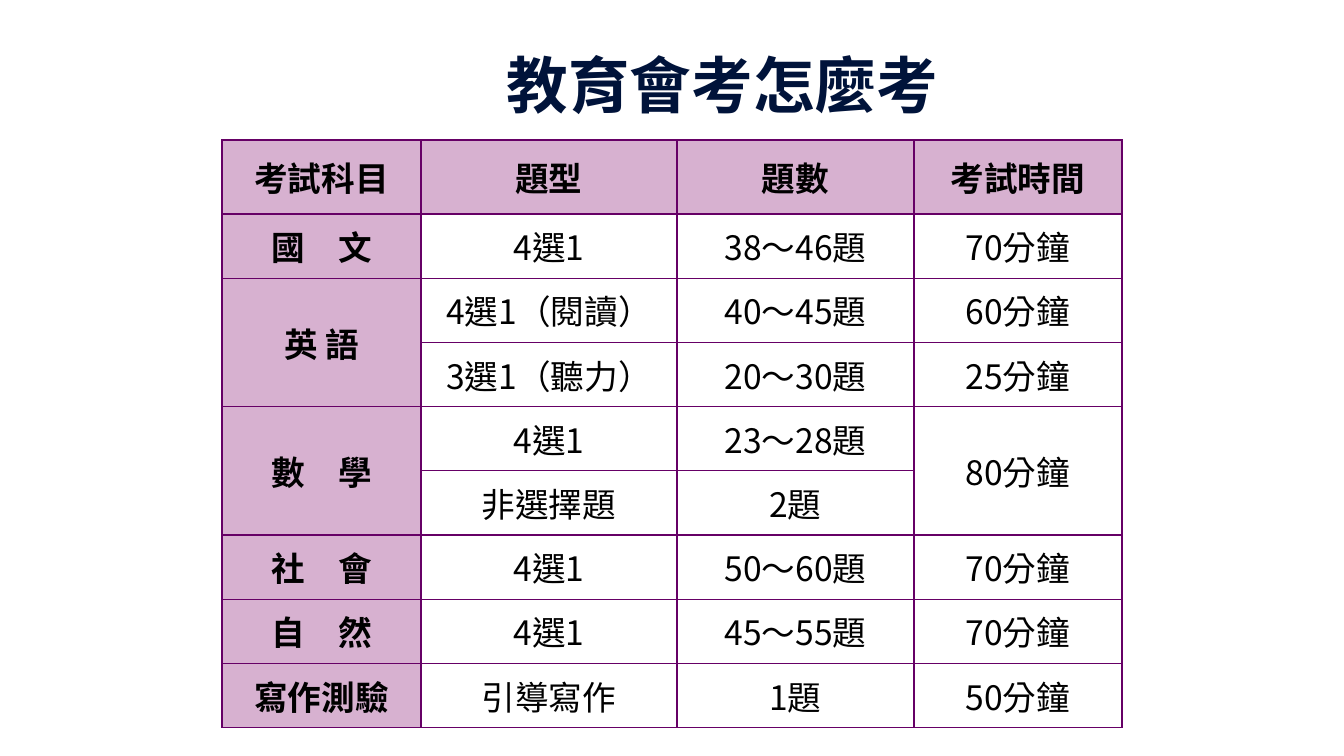
from lxml import etree
from pptx import Presentation
from pptx.dml.color import RGBColor
from pptx.enum.text import MSO_ANCHOR, PP_ALIGN
from pptx.oxml.ns import qn
from pptx.util import Pt

MIDDLE = MSO_ANCHOR.MIDDLE
CENTER = PP_ALIGN.CENTER
SCALE = 914400 / 100.8
FONT = "Noto Sans CJK SC"
COLORS = {"title": "00133A", "text": "000000", "head": "D7B1D0", "line": "660066"}

COLS = [199, 256, 237, 208]
HEAD_H = 74
ROWS = [
    ["考試科目", "題型", "題數", "考試時間"],
    ["國　文", "4選1", "38～46題", "70分鐘"],
    ["英 語", "4選1（閱讀）", "40～45題", "60分鐘"],
    ["", "3選1（聽力）", "20～30題", "25分鐘"],
    ["數　學", "4選1", "23～28題", "80分鐘"],
    ["", "非選擇題", "2題", ""],
    ["社　會", "4選1", "50～60題", "70分鐘"],
    ["自　然", "4選1", "45～55題", "70分鐘"],
    ["寫作測驗", "引導寫作", "1題", "50分鐘"],
]


def px(n):
    return round(n * SCALE)


def write(frame, text, size, color, bold):
    frame.text = text
    para = frame.paragraphs[0]
    para.alignment = CENTER
    for run in para.runs:
        font = run.font
        font.size, font.bold, font.name = Pt(size), bold, FONT
        font.color.rgb = RGBColor.from_string(COLORS[color])
        props = run._r.get_or_add_rPr()
        props.set("lang", "zh-TW")
        etree.SubElement(props, qn("a:ea"), typeface=FONT)


def rule(cell):
    """Draw a thin line on all four sides of the cell."""
    props = cell._tc.get_or_add_tcPr()
    for i, side in enumerate("LRTB"):
        line = etree.Element(qn(f"a:ln{side}"), w=str(Pt(1)))
        fill = etree.SubElement(line, qn("a:solidFill"))
        etree.SubElement(fill, qn("a:srgbClr"), val=COLORS["line"])
        props.insert(i, line)


def add_title(slide, x, y, w, h):
    box = slide.shapes.add_textbox(px(x), px(y), px(w), px(h))
    frame = box.text_frame
    frame.word_wrap = True
    frame.vertical_anchor = MIDDLE
    write(frame, "教育會考怎麼考", 44, "title", True)


def add_exams(slide, x, y, w, h):
    shape = slide.shapes.add_table(len(ROWS), len(COLS), px(x), px(y), px(w), px(h))
    table = shape.table
    table.first_row = table.horz_banding = False
    for col, width in zip(table.columns, COLS):
        col.width = px(width)
    row_h = (h - HEAD_H) / (len(ROWS) - 1)
    for r, texts in enumerate(ROWS):
        table.rows[r].height = px(row_h if r else HEAD_H)
        for c, text in enumerate(texts):
            cell = table.cell(r, c)
            head = r == 0 or c == 0
            cell.vertical_anchor = MIDDLE
            cell.margin_left = cell.margin_right = px(2)
            cell.margin_top = cell.margin_bottom = px(2)
            rule(cell)
            if head:
                cell.fill.solid()
                cell.fill.fore_color.rgb = RGBColor.from_string(COLORS["head"])
            else:
                cell.fill.background()
            if text:
                write(cell.text_frame, text, 24, "text", head)
            else:
                table.cell(r - 1, c).merge(cell)


def main():
    deck = Presentation()
    deck.slide_width, deck.slide_height = px(1344), px(756)
    slide = deck.slides.add_slide(deck.slide_layouts[6])
    add_title(slide, 269, 21, 907, 126)
    add_exams(slide, 222, 140, sum(COLS), 588)
    deck.save("out.pptx")


if __name__ == "__main__":
    main()
